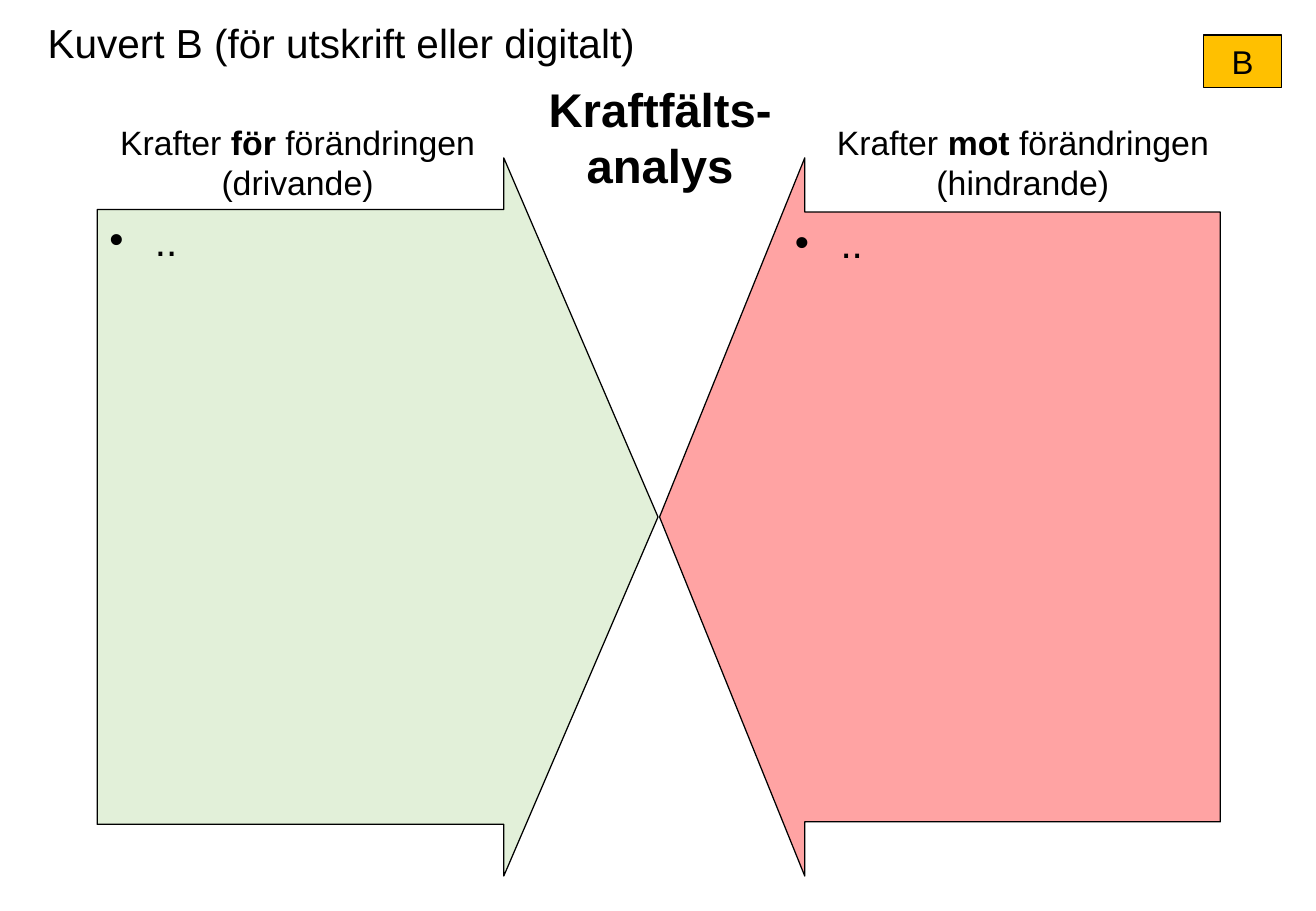
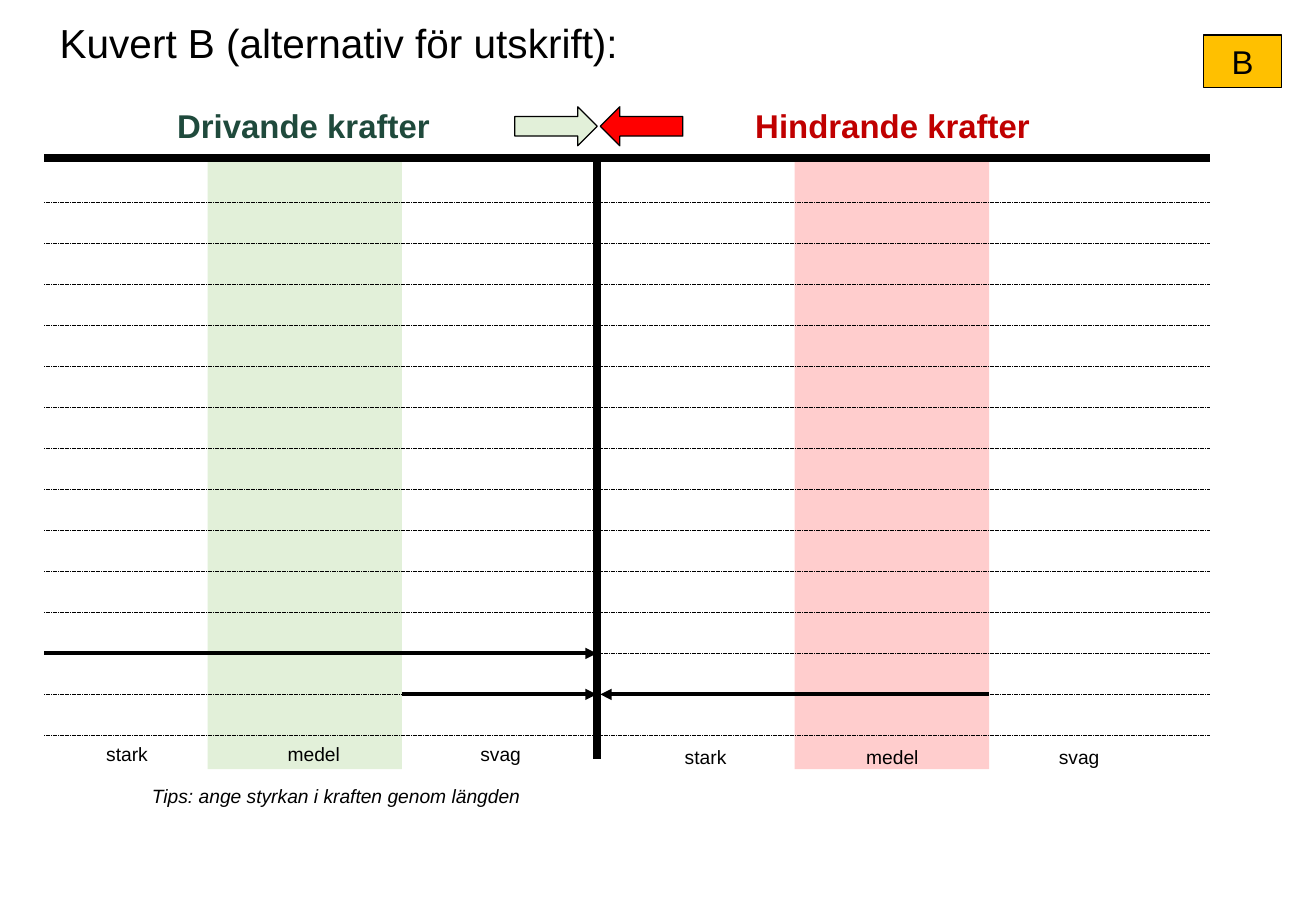
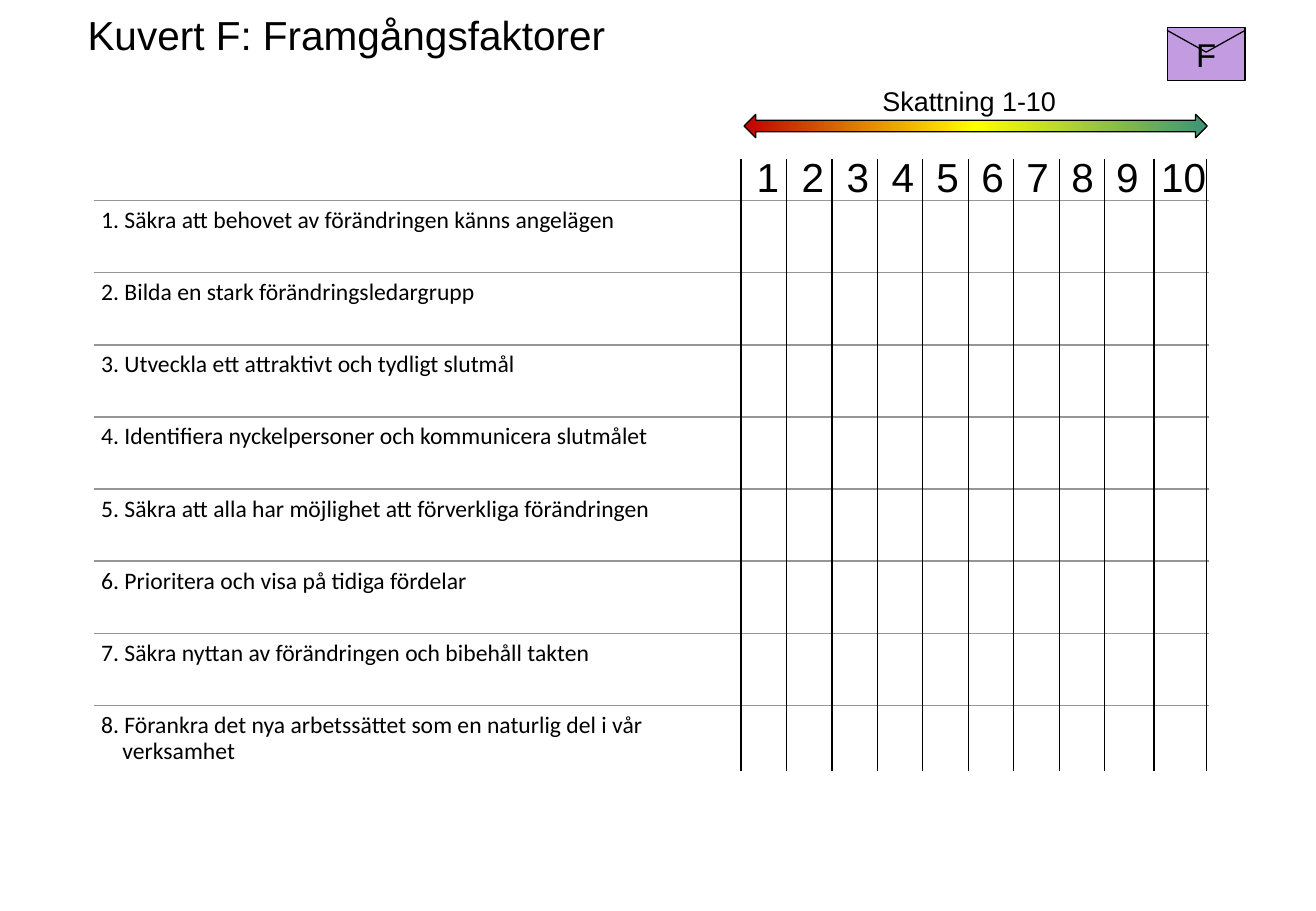
import pptx
import pptx.dml.color
import pptx.enum.dml
import pptx.enum.shapes
import pptx.enum.text
import pptx.oxml
import pptx.oxml.ns
import pptx.util

COLORS = {
    "black": "000000", "grey": "969696", "amber": "FFC000", "violet": "C39BE1",
    "light green": "E2F0D9", "dark green": "1F4A3C", "teal": "3D9378",
    "salmon": "FFA3A3", "pink": "FFCDCD", "red": "FF0000", "dark red": "C00000",
    "yellow": "FFFF00",
}
SHAPES = pptx.enum.shapes.MSO_SHAPE
ALIGN = pptx.enum.text.PP_ALIGN
ANCHOR = pptx.enum.text.MSO_ANCHOR
COLUMNS, ROWS = 130, 90  # the grid laid over every slide
INSET = (1.2, 0.6)  # usual text margins, in grid cells


def color(name):
    return pptx.dml.color.RGBColor.from_string(COLORS[name])


def add_xml(parent, tag, **attributes):
    """Append an element of the drawing namespace."""
    element = pptx.oxml.ns.qn("a:" + tag)
    child = parent.makeelement(element, attributes)
    parent.append(child)
    return child


class Deck:
    """Holds the style and the current slide; lengths are grid cells."""

    def __init__(self):
        self.presentation = pptx.Presentation()
        self.presentation.slide_width = pptx.util.Inches(10.83)
        self.presentation.slide_height = pptx.util.Inches(7.5)
        self.slide = None

    def x(self, columns):
        return round(self.presentation.slide_width * columns / COLUMNS)

    def y(self, rows):
        return round(self.presentation.slide_height * rows / ROWS)

    def box(self, left, top, width, height):
        return self.x(left), self.y(top), self.x(width), self.y(height)

    def new_slide(self, title, left, top=1.2):
        self.slide = self.presentation.slides.add_slide(self.presentation.slide_layouts[6])
        self.text(title, (left, top, 75, 6), 24)

    def frame(self, shape, inset=INSET, anchor=ANCHOR.TOP):
        text_frame = shape.text_frame
        text_frame.word_wrap = True
        text_frame.vertical_anchor = anchor
        text_frame.margin_left = text_frame.margin_right = self.x(inset[0])
        text_frame.margin_top = text_frame.margin_bottom = self.y(inset[1])
        return text_frame

    def style(self, paragraph, size, align=ALIGN.LEFT, ink="black", font="Arial",
              bold=False, italic=False):
        paragraph.alignment = align
        for run in paragraph.runs:
            run.font.name = font
            run.font.size = pptx.util.Pt(size)
            run.font.bold = bold
            run.font.italic = italic
            run.font.color.rgb = color(ink)

    def hang(self, paragraph, columns):
        properties = paragraph._p.get_or_add_pPr()
        properties.set("marL", str(self.x(columns)))
        properties.set("indent", str(-self.x(columns)))
        return properties

    def text(self, words, box, size, inset=INSET, **style):
        text_box = self.slide.shapes.add_textbox(*self.box(*box))
        text_frame = self.frame(text_box, inset)
        text_frame.text = words
        paragraph = text_frame.paragraphs[0]
        self.style(paragraph, size, **style)
        return paragraph

    def heading(self, before, strong, after, second_line, box):
        """Two centred lines with one bold word in the first."""
        paragraph = self.text(before, box, 20)
        for words in (strong, after):
            paragraph.add_run().text = words
        paragraph.add_line_break()
        paragraph.add_run().text = second_line
        self.style(paragraph, 20, ALIGN.CENTER)
        paragraph.runs[1].font.bold = True

    def shape(self, kind, box, fill, outlined=True, adjustments=()):
        shape = self.slide.shapes.add_shape(kind, *self.box(*box))
        shape.shadow.inherit = False
        shape.fill.solid()
        shape.fill.fore_color.rgb = color(fill)
        if outlined:
            shape.line.color.rgb = color("black")
            shape.line.width = pptx.util.Pt(0.75)
        else:
            shape.line.fill.background()
        for index, value in enumerate(adjustments):
            shape.adjustments[index] = value
        return shape

    def bullet_arrow(self, kind, box, fill, adjustments):
        arrow = self.shape(kind, box, fill, adjustments=adjustments)
        text_frame = self.frame(arrow)
        text_frame.text = ".."
        paragraph = text_frame.paragraphs[0]
        properties = self.hang(paragraph, 4.5)
        add_xml(properties, "buFont", typeface="Arial")
        add_xml(properties, "buChar", char="•")
        self.style(paragraph, 24)

    def gradient_arrow(self, box, names):
        arrow = self.shape(SHAPES.LEFT_RIGHT_ARROW, box, names[0])
        arrow.fill.gradient()
        arrow.fill.gradient_angle = 0
        stops = arrow.element.spPr.find(".//" + pptx.oxml.ns.qn("a:gsLst"))
        for stop in list(stops):
            stops.remove(stop)
        for index, name in enumerate(names):
            position = 100000 * index // (len(names) - 1)
            stop = add_xml(stops, "gs", pos=str(position))
            add_xml(stop, "srgbClr", val=COLORS[name])

    def badge(self, letter, fill, left=118.9, top=3.45):
        badge = self.shape(SHAPES.RECTANGLE, (left, top, 7.7, 5.2), fill)
        text_frame = self.frame(badge, (1, 0.5), ANCHOR.MIDDLE)
        text_frame.text = letter
        self.style(text_frame.paragraphs[0], 19.5, ALIGN.CENTER)

    def line(self, start, end, width=0.75, ink="black", dashed=False, arrow=False):
        connector = self.slide.shapes.add_connector(
            pptx.enum.shapes.MSO_CONNECTOR.STRAIGHT,
            self.x(start[0]), self.y(start[1]), self.x(end[0]), self.y(end[1]))
        connector.line.color.rgb = color(ink)
        connector.line.width = pptx.util.Pt(width)
        if dashed:
            connector.line.dash_style = pptx.enum.dml.MSO_LINE.SQUARE_DOT
        properties = connector.element.spPr
        if arrow:
            add_xml(properties.find(pptx.oxml.ns.qn("a:ln")), "tailEnd", type="triangle")
        add_xml(properties, "effectLst")


def force_field(deck):
    deck.new_slide("Kuvert B (för utskrift eller digitalt)", 3.5)
    deck.badge("B", "amber")
    # Two arrows meeting in the middle
    deck.bullet_arrow(SHAPES.RIGHT_ARROW, (9.6, 15.6, 55.4, 70.95), "light green",
                      (0.856, 0.275))
    deck.text("Kraftfälts-analys", (49.8, 7.3, 30.8, 12.5), 28,
              align=ALIGN.CENTER, bold=True)
    deck.heading("Krafter ", "för", " förändringen", "(drivande)", (9.2, 11.4, 40.4, 9.2))
    deck.heading("Krafter ", "mot", " förändringen", "(hindrande)", (79.7, 11.4, 42.7, 9.2))
    deck.bullet_arrow(SHAPES.LEFT_ARROW, (65.15, 15.6, 55.4, 70.95), "salmon",
                      (0.849, 0.259))


def force_lines(deck):
    left, middle, right, top = 4.35, 58.95, 119.5, 15.6
    row_lines = [20 + 4.05 * row for row in range(14)]
    band_left, band_right, band_width = 20.5, 78.5, 19.2

    deck.new_slide("Kuvert B (alternativ för utskrift):", 4.7)
    # Bands for medium strength
    for band, fill in ((band_right, "pink"), (band_left, "light green")):
        deck.shape(SHAPES.RECTANGLE, (band, 15.7, band_width, 60.3), fill, outlined=False)
    # Main cross and writing lines
    deck.line((left, top), (right, top), 4.5)
    deck.line((middle, top), (middle, 75), 4.5)
    for row in row_lines:
        deck.line((left, row), (right, row), 0.25, dashed=True)
    # Example forces
    strong, weak = row_lines[11:13]
    for start, end, row in ((left, middle, strong),
                            (band_left + band_width, middle, weak),
                            (band_right + band_width, middle + 0.35, weak)):
        deck.line((start, row), (end, row), 2.25, arrow=True)
    # Strength labels
    for first_center, label_top in ((12.55, 72.7), (69.7, 73.05)):
        for index, word in enumerate(("stark", "medel", "svag")):
            center = first_center + 18.45 * index
            deck.text(word, (center - 5, label_top, 10, 3.5), 11.4, align=ALIGN.CENTER)
    deck.text("Tips: ange styrkan i kraften genom längden", (13.8, 76.9, 42, 3.5), 11.4,
              italic=True)
    # Headings with small arrows
    deck.text("Drivande krafter", (13.7, 9.85, 30, 5.2), 19.5, align=ALIGN.RIGHT,
              ink="dark green", bold=True)
    deck.text("Hindrande krafter", (73.4, 9.85, 32, 5.2), 19.5, ink="dark red", bold=True)
    for arrow_left, fill, rotation in ((50.85, "light green", 0), (59.3, "red", 180)):
        arrow = deck.shape(SHAPES.RIGHT_ARROW, (arrow_left, 10.55, 8.15, 3.85), fill)
        arrow.rotation = rotation
    deck.badge("B", "amber")


def success_factors(deck):
    factors = (
        "1. Säkra att behovet av förändringen känns angelägen",
        "2. Bilda en stark förändringsledargrupp",
        "3. Utveckla ett attraktivt och tydligt slutmål",
        "4. Identifiera nyckelpersoner och kommunicera slutmålet",
        "5. Säkra att alla har möjlighet att förverkliga förändringen",
        "6. Prioritera och visa på tidiga fördelar",
        "7. Säkra nyttan av förändringen och bibehåll takten",
        "8. Förankra det nya arbetssättet som en naturlig del i vår\vverksamhet",
    )
    left, width, pitch = 9.25, 110.15, 7.13

    deck.new_slide("Kuvert F: Framgångsfaktorer", 7.45, 0.4)
    # Factor rows
    for index, factor in enumerate(factors):
        top = 19.8 + pitch * index
        deck.line((left, top), (left + width, top), 1, "grey")
        paragraph = deck.text(factor, (left, top, width, pitch), 14, (0.75, 0.75),
                              font="Calibri")
        deck.hang(paragraph, 2.1)
        paragraph.line_spacing = 0.9
    # Scale numbers on tab stops
    numbers = deck.text("\t".join(str(number) for number in range(1, 11)),
                        (73.55, 14.4, 49, 6), 24)
    tabs = add_xml(numbers._p.get_or_add_pPr(), "tabLst")
    for index in range(1, 10):
        add_xml(tabs, "tab", pos=str(deck.x(4.44 * index)), algn="l")
    # Scale columns: nine equal steps, then two wider ones
    for column in [73.2 + 4.49 * index for index in range(9)] + [114, 119.15]:
        deck.line((column, 15.7), (column, 76.2))
    deck.text("Skattning 1-10", (83.75, 7.8, 24, 4.4), 16, align=ALIGN.CENTER)
    # Envelope
    deck.badge("F", "violet", 115.3, 2.75)
    for corner in (115.3, 123):
        deck.line((corner, 3), (119.15, 5.15))
    deck.gradient_arrow((73.5, 11.3, 45.75, 2.3), ("dark red", "yellow", "teal"))


def main():
    deck = Deck()
    force_field(deck)
    force_lines(deck)
    success_factors(deck)
    deck.presentation.save("out.pptx")


if __name__ == "__main__":
    main()
